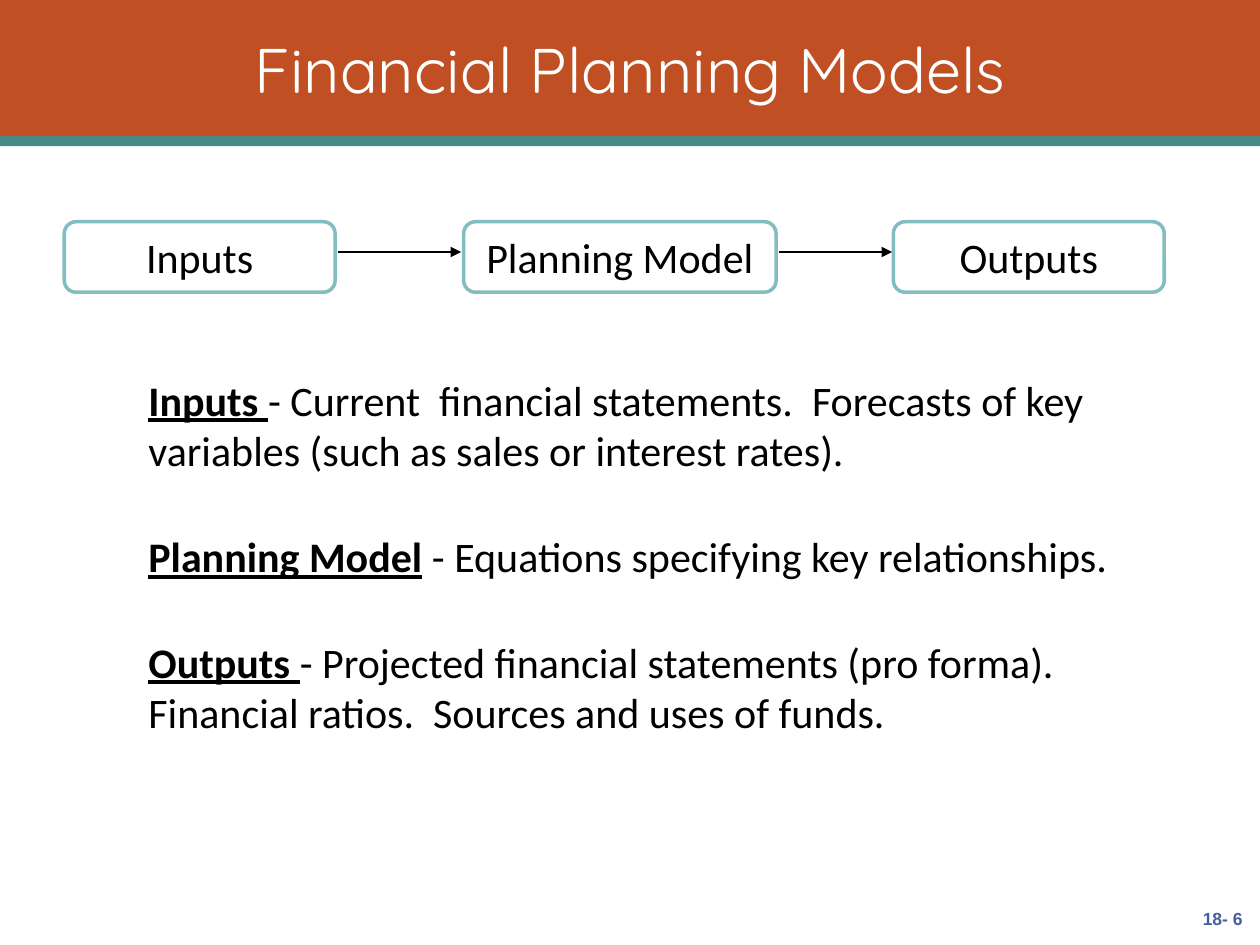
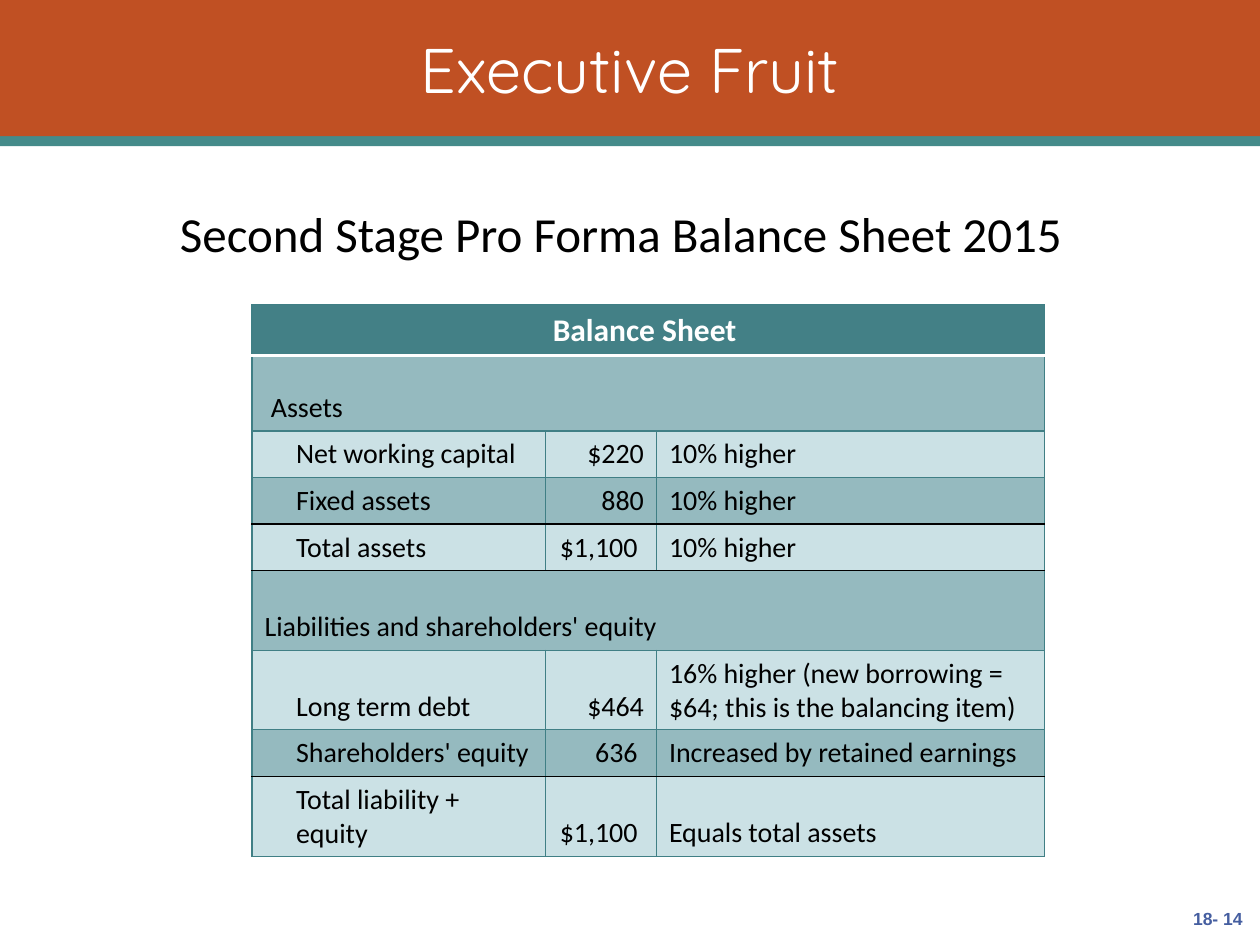
"""Build two slides on financial planning models and a pro forma balance sheet."""
from lxml import etree
from pptx import Presentation
from pptx import util as u
from pptx.dml.color import RGBColor
from pptx.enum import shapes, text
from pptx.oxml.ns import qn

ORANGE, TEAL, BLUE = "C05023", "458B8A", "455EA0"
BLACK, WHITE, BOX_LINE = "000000", "FFFFFF", "83BCC1"
HEADER, DARK_ROW, PALE_ROW, GRID = "438086", "95BABF", "CBE1E5", "407F85"
LEFT, CENTER, RIGHT = text.PP_ALIGN.LEFT, text.PP_ALIGN.CENTER, text.PP_ALIGN.RIGHT


def rgb(value):
    """Turn a hex string into a colour."""
    return RGBColor.from_string(value)


def style(p, size, color=BLACK, font="Calibri", bold=False, align=LEFT):
    """Format a whole paragraph."""
    p.alignment = align
    p.font.name, p.font.size, p.font.bold = font, u.Pt(size), bold
    p.font.color.rgb = rgb(color)


prs = Presentation()
prs.slide_width, prs.slide_height = u.Inches(10), u.Inches(7.5)

slides = []
for title, number in [("Financial Planning Models", "18- 6"), ("Executive Fruit", "18- 14")]:
    s = prs.slides.add_slide(prs.slide_layouts[5])
    slides.append(s)
    for i, (top, height, color) in enumerate([(1.08, 0.08, TEAL), (0, 1.08, ORANGE)]):
        sp = s.shapes.add_shape(shapes.MSO_SHAPE.RECTANGLE, 0, u.Inches(top),
                                prs.slide_width, u.Inches(height))
        sp.shadow.inherit = False
        sp.fill.solid()
        sp.fill.fore_color.rgb = rgb(color)
        sp.line.fill.background()
        s.shapes._spTree.insert(2 + i, sp._element)

    sp = s.shapes.title
    sp.left, sp.top, sp.width, sp.height = map(u.Inches, (0.75, 0.08, 8.5, 0.92))
    tf = sp.text_frame
    tf.text = title
    tf.vertical_anchor = text.MSO_ANCHOR.MIDDLE
    style(tf.paragraphs[0], 36, WHITE, "Quicksand", align=CENTER)

    tf = s.shapes.add_textbox(*map(u.Inches, (8.96, 7.08, 1, 0.42))).text_frame
    tf.text = number
    tf.word_wrap = True
    tf.vertical_anchor = text.MSO_ANCHOR.MIDDLE
    style(tf.paragraphs[0], 10, BLUE, "Arial", True, RIGHT)

models, fruit = slides

for label, left, width in [("Inputs", 0.51, 2.15), ("Planning Model", 3.68, 2.48),
                           ("Outputs", 7.09, 2.15)]:
    sp = models.shapes.add_shape(shapes.MSO_SHAPE.ROUNDED_RECTANGLE,
                                 *map(u.Inches, (left, 1.76, width, 0.56)))
    sp.shadow.inherit = False
    sp.fill.solid()
    sp.fill.fore_color.rgb = rgb(WHITE)
    sp.line.color.rgb = rgb(BOX_LINE)
    sp.line.width = u.Pt(2)
    tf = sp.text_frame
    tf.text = label
    tf.vertical_anchor = text.MSO_ANCHOR.TOP
    style(tf.paragraphs[0], 24, align=CENTER)

for start, end in [(2.68, 3.66), (6.18, 7.08)]:
    arrow = models.shapes.add_connector(shapes.MSO_CONNECTOR.STRAIGHT,
                                        *map(u.Inches, (start, 2, end, 2)))
    arrow.line.color.rgb = rgb(BLACK)
    arrow.line.width = u.Pt(1)
    etree.SubElement(arrow.line._get_or_add_ln(), qn("a:tailEnd"), type="triangle")
    etree.SubElement(arrow._element.spPr, qn("a:effectLst"))

definitions = [
    (2.92, 1.16, "Inputs ", "- Current  financial statements.  Forecasts of key variables "
                            "(such as sales or interest rates)."),
    (4.16, 0.76, "Planning Model", " - Equations specifying key relationships."),
    (5, 0.91, "Outputs ", "- Projected financial statements (pro forma). "
                          "Financial ratios.  Sources and uses of funds."),
]
for top, height, term, meaning in definitions:
    tf = models.shapes.add_textbox(*map(u.Inches, (1.08, top, 7.93, height))).text_frame
    tf.word_wrap = True
    p = tf.paragraphs[0]
    style(p, 24)
    r = p.add_run()
    r.text = term
    r.font.bold = r.font.underline = True
    p.add_run().text = meaning

tf = fruit.shapes.add_textbox(*map(u.Inches, (1.33, 1.57, 7.42, 0.57))).text_frame
tf.text = "Second Stage Pro Forma Balance Sheet 2015"
tf.word_wrap = True
style(tf.paragraphs[0], 28)

rows = [
    (0.39, ["Balance Sheet "]),
    (0.6, [" Assets"]),
    (0.37, ["Net working capital", "$220", "10% higher"]),
    (0.37, ["Fixed assets", "880", "10% higher"]),
    (0.37, ["Total assets", "$1,100 ", "10% higher"]),
    (0.63, ["Liabilities and shareholders' equity"]),
    (0.63, ["Long term debt", "$464",
            "16% higher (new borrowing = $64; this is the balancing item)"]),
    (0.37, ["Shareholders' equity", "636 ", "Increased by retained earnings"]),
    (0.63, ["Total liability + equity", "$1,100 ", "Equals total assets"]),
]
rules = {1: (WHITE, 2), 4: (BLACK, 1), 5: (BLACK, 1), 8: (BLACK, 1)}
grid = (GRID, 0.75)
table = fruit.shapes.add_table(len(rows), 3, *map(u.Inches, (2, 2.42, 6.29, 4.36))).table
for column, width in zip(table.columns, (2.33, 0.88, 3.08)):
    column.width = u.Inches(width)

for i, (height, values) in enumerate(rows):
    table.rows[i].height = u.Inches(height)
    if len(values) == 1:
        table.cell(i, 0).merge(table.cell(i, 2))
    for j in range(3):
        cell = table.cell(i, j)
        edges = {"L": grid, "R": grid, "T": rules.get(i, grid), "B": rules.get(i + 1, grid)}
        for side, (color, weight) in edges.items():
            ln = etree.SubElement(cell._tc.get_or_add_tcPr(), qn("a:ln" + side),
                                  w=str(u.Pt(weight)))
            etree.SubElement(etree.SubElement(ln, qn("a:solidFill")), qn("a:srgbClr"), val=color)
        cell.fill.solid()
        cell.fill.fore_color.rgb = rgb(HEADER if i == 0 else DARK_ROW if i % 2 else PALE_ROW)
        cell.vertical_anchor = text.MSO_ANCHOR.BOTTOM
        if j < len(values):
            cell.text = values[j]
            p = cell.text_frame.paragraphs[0]
            if i == 0:
                style(p, 18, WHITE, bold=True, align=CENTER)
            else:
                style(p, 16, align=RIGHT if j == 1 else LEFT)
            if j == 0 and len(values) == 3:
                p._p.get_or_add_pPr().set("marL", str(u.Inches(0.25)))

prs.save("out.pptx")
